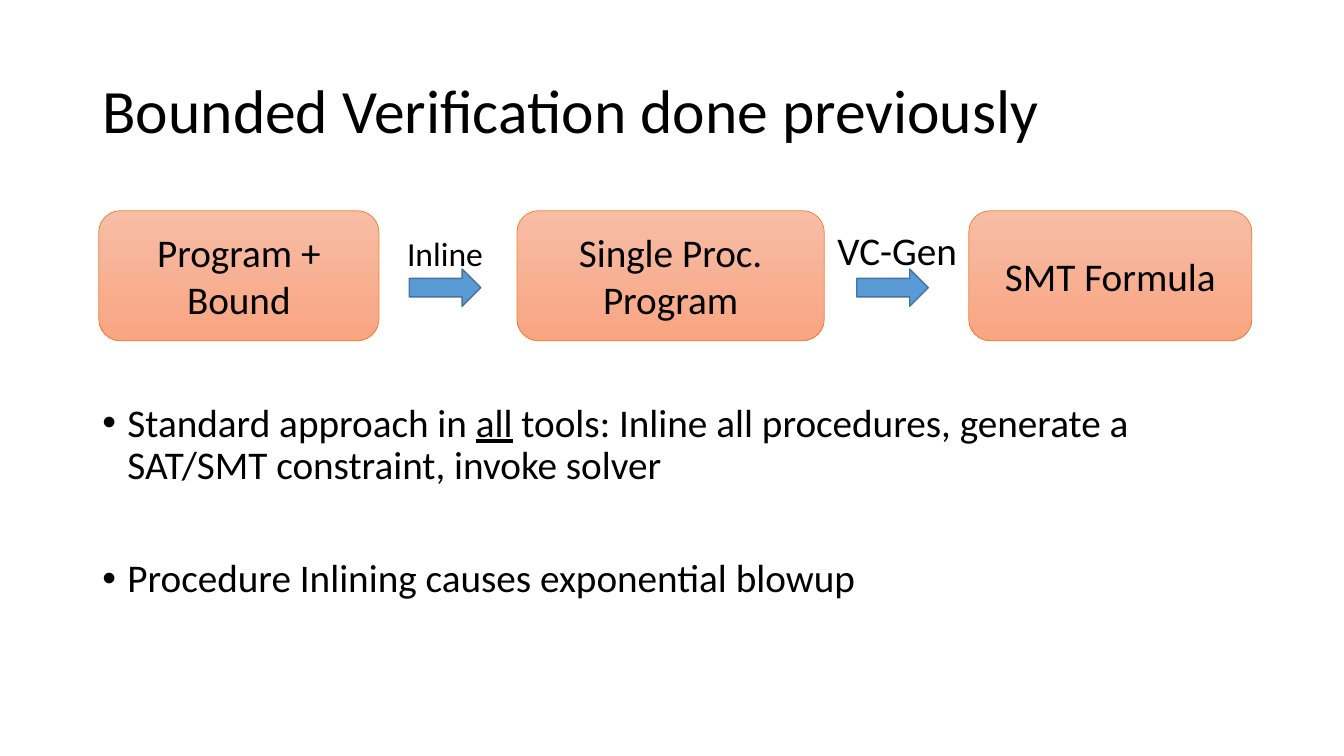
from pptx import Presentation
from pptx.util import Pt
from pptx.dml.color import RGBColor
from pptx.enum.shapes import MSO_SHAPE
from pptx.enum.text import MSO_ANCHOR, MSO_AUTO_SIZE, PP_ALIGN
from lxml import etree

ROUND = MSO_SHAPE.ROUNDED_RECTANGLE
ARROW = MSO_SHAPE.RIGHT_ARROW
TOP, MIDDLE = MSO_ANCHOR.TOP, MSO_ANCHOR.MIDDLE
FIXED = MSO_AUTO_SIZE.NONE
LEFT, CENTER = PP_ALIGN.LEFT, PP_ALIGN.CENTER
A = "{http://schemas.openxmlformats.org/drawingml/2006/main}"

STAGES = [
    (0, 200.2, "Program + Bound"),
    (298.7, 219.6, "Single Proc. Program"),
    (621.4, 202.3, "SMT Formula"),
]
STEPS = [
    (221.8, 213.2, 69.1, 36, 24, "Inline"),
    (541.5, 520.6, 100.8, 41, 28, "VC-Gen"),
]
POINTS = [
    (10, [("Standard approach in ", False), ("all", True),
          (" tools: Inline all procedures, generate a SAT/SMT constraint, invoke solver", False)]),
    (50.7, [("Procedure Inlining causes exponential blowup", False)]),
]


def color(code):
    return RGBColor.from_string(code)


def apply(item, values):
    for name, value in values.items():
        setattr(item, name, value)


def place(shape, box):
    names = ("left", "top", "width", "height")
    apply(shape, dict(zip(names, map(Pt, box))))


def write(par, text, size, under=False):
    run = par.add_run()
    run.text = text
    apply(run.font, {"name": "Calibri", "size": Pt(size), "underline": under})
    run.font.color.rgb = color("000000")


def draw(slide, kind, box, edge, weight):
    shape = slide.shapes.add_shape(kind, *map(Pt, box))
    shape.shadow.inherit = False
    shape.line.color.rgb = color(edge)
    shape.line.width = Pt(weight)
    return shape


def title(slide, box, text):
    shape = slide.shapes.title
    place(shape, box)
    frame = shape.text_frame
    apply(frame, {"vertical_anchor": MIDDLE, "auto_size": FIXED, "word_wrap": True})
    par = frame.paragraphs[0]
    apply(par, {"alignment": LEFT, "line_spacing": 0.9})
    write(par, text, 44)


def stage(slide, box, text):
    shape = draw(slide, ROUND, box, "ED7D31", 0.5)
    fill = shape.fill
    fill.gradient()
    fill.gradient_angle = 270
    for stop, code in zip(fill.gradient_stops, ("F7BDA5", "F8A582")):
        stop.color.rgb = color(code)
    frame = shape.text_frame
    apply(frame, {"vertical_anchor": MIDDLE, "word_wrap": True})
    par = frame.paragraphs[0]
    par.alignment = CENTER
    write(par, text, 28)


def label(slide, box, text, size):
    frame = slide.shapes.add_textbox(*map(Pt, box)).text_frame
    apply(frame, {"word_wrap": False, "vertical_anchor": TOP})
    write(frame.paragraphs[0], text, size)


def flow(slide, box):
    left, top, width, height = box
    for shift, span, text in STAGES:
        stage(slide, (left + shift, top, span, height), text)
    for arrow, shift, span, tall, size, text in STEPS:
        shape = draw(slide, ARROW, (left + arrow, top + 41.7, 51.1, 26.6), "43739E", 1)
        shape.fill.solid()
        shape.fill.fore_color.rgb = color("5B9BD5")
        label(slide, (left + shift, top + 48.5 - tall, span, tall), text, size)


def points(slide, box):
    frame = slide.shapes.add_textbox(*map(Pt, box)).text_frame
    apply(frame, {"word_wrap": True, "vertical_anchor": TOP})
    for i, (gap, parts) in enumerate(POINTS):
        par = frame.add_paragraph() if i else frame.paragraphs[0]
        apply(par, {"line_spacing": 0.9, "space_before": Pt(gap)})
        props = par._p.get_or_add_pPr()
        props.set("marL", str(Pt(18)))
        props.set("indent", str(Pt(-18)))
        etree.SubElement(props, A + "buFont", typeface="Arial")
        etree.SubElement(props, A + "buChar", char="•")
        for text, under in parts:
            write(par, text, 28, under)


def main():
    deck = Presentation()
    apply(deck, {"slide_width": Pt(960), "slide_height": Pt(540)})
    slide = deck.slides.add_slide(deck.slide_layouts[5])
    title(slide, (66, 29, 828, 104.4), "Bounded Verification done previously")
    flow(slide, (70.5, 150.5, 823.7, 92.9))
    points(slide, (66, 284.4, 828, 202.3))
    deck.save("out.pptx")


if __name__ == "__main__":
    main()
